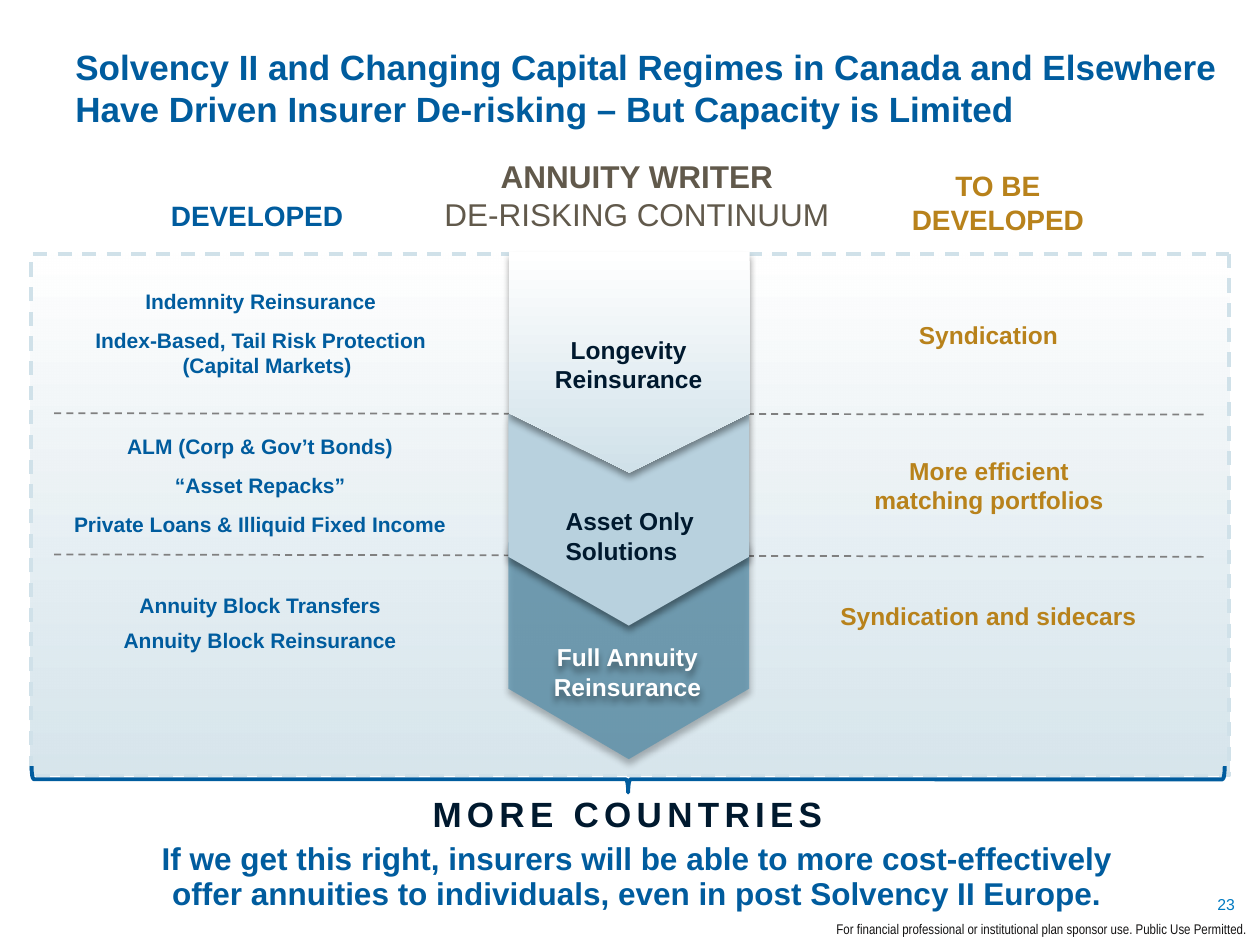
from lxml.etree import SubElement
from pptx import Presentation
from pptx.dml.color import RGBColor
from pptx.enum.dml import MSO_LINE
from pptx.enum.shapes import MSO_CONNECTOR, MSO_SHAPE
from pptx.enum.text import MSO_ANCHOR, PP_ALIGN
from pptx.oxml.ns import qn
from pptx.util import Inches, Pt

BLUE = RGBColor(0x00, 0x5C, 0x9E)
NUMBER_BLUE = RGBColor(0x00, 0x7A, 0xC2)
NAVY = RGBColor(0x00, 0x19, 0x2E)
GOLD = RGBColor(0xB8, 0x82, 0x1B)
BROWN = RGBColor(0x61, 0x59, 0x4B)
GREY = RGBColor(0x80, 0x80, 0x80)
BLACK = RGBColor(0x14, 0x13, 0x13)
WHITE = RGBColor(0xFF, 0xFF, 0xFF)
PALE = RGBColor(0xD0, 0xE1, 0xE9)
LIGHT_STEEL = RGBColor(0xB8, 0xD1, 0xDE)
STEEL = RGBColor(0x50, 0x8E, 0xAC)

prs = Presentation()
prs.slide_width, prs.slide_height = Inches(10), Inches(7.5)
slide = prs.slides.add_slide(prs.slide_layouts[6])
shapes = slide.shapes


def add_text(box, lines, size, color, align=PP_ALIGN.CENTER, bold=True, font="Arial",
             before=(), indent=0, wrap=True, anchor=MSO_ANCHOR.TOP):
    """Add a text box; before lists the space above each paragraph, indent hangs its first line."""
    text_box = shapes.add_textbox(*map(Inches, box))
    frame = text_box.text_frame
    frame.word_wrap = wrap
    frame.vertical_anchor = anchor
    for i, line in enumerate(lines):
        paragraph = frame.paragraphs[0] if i == 0 else frame.add_paragraph()
        paragraph.text = line
        paragraph.alignment = align
        paragraph.font.name = font
        paragraph.font.size = Pt(size)
        paragraph.font.bold = bold
        paragraph.font.color.rgb = color
        if before:
            paragraph.space_before = Pt(before[i])
        if indent:
            properties = paragraph._p.get_or_add_pPr()
            properties.set("marL", str(Inches(indent)))
            properties.set("indent", str(-Inches(indent)))
    return text_box


def add_pentagon(box, point, colors, alpha=100):
    """Add a downward pentagon; two colors make a gradient, alpha applies to the last."""
    pentagon = shapes.add_shape(MSO_SHAPE.PENTAGON, *map(Inches, box))
    pentagon.rotation = 90
    pentagon.adjustments[0] = point
    pentagon.shadow.inherit = False
    pentagon.line.fill.background()
    if len(colors) == 2:
        pentagon.fill.gradient()
        pentagon.fill.gradient_angle = 0
        for stop, position, color in zip(pentagon.fill.gradient_stops, (0, 1), colors):
            stop.position = position
            stop.color.rgb = color
    else:
        pentagon.fill.solid()
        pentagon.fill.fore_color.rgb = colors[0]
    if alpha < 100:
        last_color = list(pentagon._element.spPr.iter(qn("a:srgbClr")))[-1]
        SubElement(last_color, qn("a:alpha")).set("val", str(alpha * 1000))
    return pentagon


# Panel and row dividers
panel = add_pentagon((2.93, -0.67, 4.14, 9.51), 0, (WHITE, PALE), 83)
panel.line.color.rgb = PALE
panel.line.width = Pt(2)
panel.line.dash_style = MSO_LINE.DASH

for start_y, end_y in ((3.28, 3.29), (4.4, 4.42)):
    divider = shapes.add_connector(MSO_CONNECTOR.STRAIGHT, Inches(0.43), Inches(start_y),
                                   Inches(9.58), Inches(end_y))
    divider.line.color.rgb = GREY
    divider.line.width = Pt(1)
    divider.line.dash_style = MSO_LINE.DASH
    SubElement(divider._element.spPr, qn("a:effectLst"))

# Continuum, from the bottom step up so that each overlaps the next
shadowed = [
    add_pentagon((4.13, 4.21, 1.72, 1.91), 0.325, (STEEL,), 65),
    add_pentagon((4.15, 3.17, 1.68, 1.91), 0.325, (LIGHT_STEEL,)),
    add_pentagon((4.12, 1.92, 1.75, 1.91), 0.269, (WHITE, PALE)),
]
add_text((4.3, 2.61, 1.38, 0.57), ["Longevity", "Reinsurance"], 14, NAVY, wrap=False)
add_text((4.39, 3.97, 1.22, 0.57), ["Asset Only", "Solutions"], 14, NAVY,
         PP_ALIGN.LEFT, wrap=False)
shadowed.append(add_text((4.29, 5.05, 1.38, 0.57), ["Full Annuity", "Reinsurance"],
                         14, WHITE, wrap=False))

for shape in shadowed:
    shape.shadow.inherit = False
    effects = shape._element.spPr.find(qn("a:effectLst"))
    shadow = SubElement(effects, qn("a:outerShdw"), blurRad=str(Pt(4)), dist=str(Pt(3)),
                        dir="5400000", rotWithShape="0")
    shadow_color = SubElement(shadow, qn("a:srgbClr"), val="000000")
    SubElement(shadow_color, qn("a:alpha"), val="40000")

# Title and column headings
add_text((0.5, 0.31, 9.27, 1.25),
         ["Solvency II and Changing Capital Regimes in Canada and Elsewhere "
          "Have Driven Insurer De-risking – But Capacity is Limited"],
         20, BLUE, PP_ALIGN.LEFT)
continuum_heading = add_text((0.79, 1.21, 8.53, 0.67),
                             ["ANNUITY WRITER", "DE-RISKING CONTINUUM"],
                             18, BROWN, anchor=MSO_ANCHOR.MIDDLE)
continuum_heading.text_frame.paragraphs[1].font.bold = False
add_text((1.07, 1.37, 1.94, 0.67), ["DEVELOPED"], 16, BLUE, anchor=MSO_ANCHOR.MIDDLE)
add_text((6.95, 1.27, 1.94, 0.67), ["TO BE DEVELOPED"], 16, GOLD, anchor=MSO_ANCHOR.MIDDLE)

# Developed
add_text((0.33, 2.24, 3.48, 0.82),
         ["Indemnity Reinsurance", "Index-Based, Tail Risk Protection\n(Capital Markets)"],
         12, BLUE, before=(8, 8), indent=0.1)
add_text((0.3, 3.39, 3.53, 0.93),
         ["ALM (Corp & Gov’t Bonds)", "“Asset Repacks”", "Private Loans & Illiquid Fixed Income"],
         12, BLUE, before=(8, 8, 8))
add_text((0.46, 4.65, 3.21, 0.59), ["Annuity Block Transfers", "Annuity Block Reinsurance"],
         12, BLUE, before=(8, 6))

# To be developed
add_text((6.24, 2.49, 3.21, 0.34), ["Syndication"], 14, GOLD, before=(6,), indent=0.2)
add_text((6.58, 3.57, 2.54, 0.57), ["More efficient\nmatching portfolios"], 14, GOLD, before=(6,))
add_text((6.31, 4.72, 3.07, 0.34), ["Syndication and sidecars"], 14, GOLD,
         before=(6,), indent=0.2)

# Conclusion
brace = shapes.add_shape(MSO_SHAPE.RIGHT_BRACE, Inches(4.88), Inches(1.45),
                         Inches(0.21), Inches(9.47))
brace.rotation = 90
brace.shadow.inherit = False
brace.fill.background()
brace.line.color.rgb = BLUE
brace.line.width = Pt(2.25)

countries = add_text((3.1, 6.24, 3.76, 0.69), ["MORE COUNTRIES"], 20, NAVY)
countries.text_frame.paragraphs[0].runs[0].font._element.set("spc", "300")
conclusion = add_text((0.85, 6.63, 8.41, 0.71),
                      ["If we get this right, insurers will be able to more cost-effectively\n"
                       "offer annuities to individuals, even in post Solvency II Europe."],
                      18, BLUE)
conclusion.text_frame.paragraphs[0].line_spacing = Pt(20)

# Footer
add_text((9.33, 7.05, 0.57, 0.25), ["23"], 9, NUMBER_BLUE, PP_ALIGN.RIGHT, bold=False,
         anchor=MSO_ANCHOR.MIDDLE)
add_text((4.64, 7.26, 5.36, 0.24),
         ["For financial professional or institutional plan sponsor use. Public Use Permitted."],
         8, BLACK, PP_ALIGN.RIGHT, bold=False, font="Arial Narrow")

prs.save("out.pptx")
